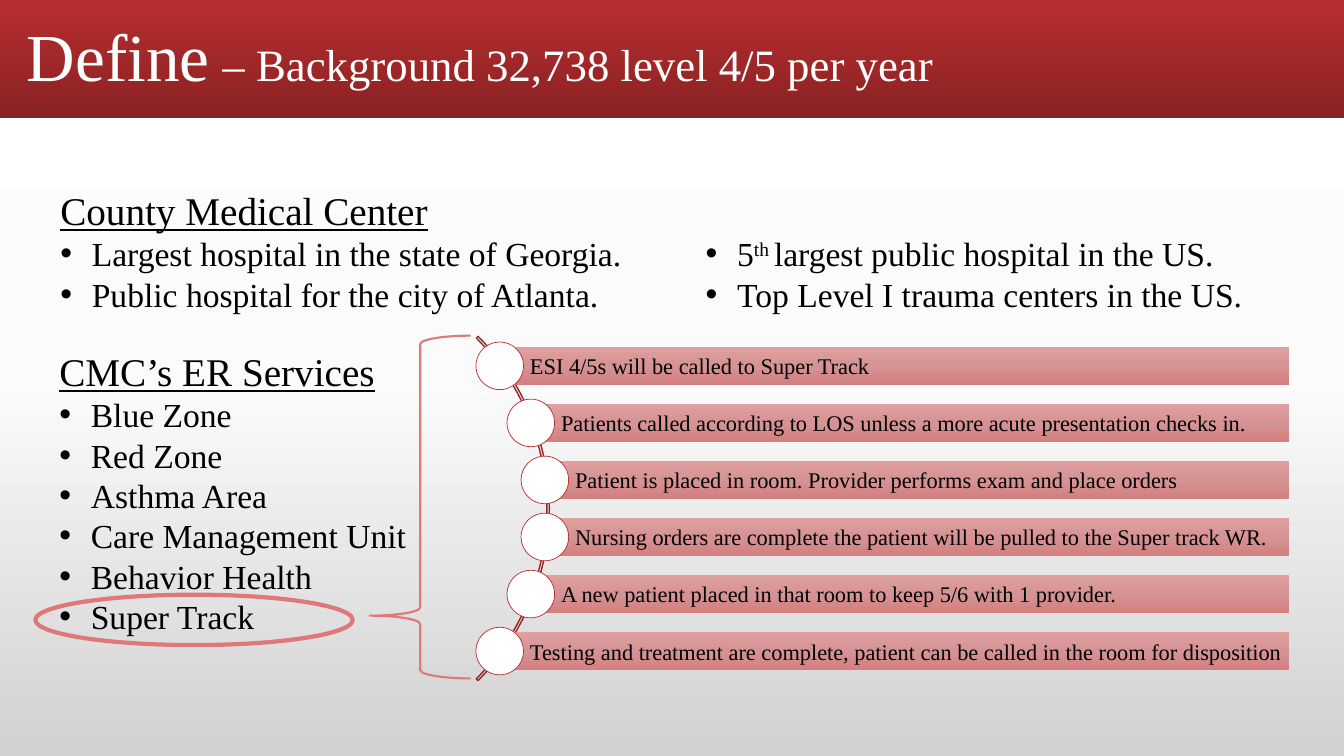
from dataclasses import dataclass
from math import sqrt
from typing import Optional

from lxml.etree import SubElement
from pptx import Presentation
from pptx.dml.color import RGBColor
from pptx.enum.shapes import MSO_SHAPE as Preset
from pptx.enum.text import MSO_ANCHOR as Anchor, PP_ALIGN as Align
from pptx.oxml.ns import qn
from pptx.util import Pt


@dataclass(frozen=True)
class Theme:
    font: str = "Times New Roman"
    white: str = "FFFFFF"
    black: str = "000000"
    accent: str = "B82D2F"
    arc: str = "932426"
    mark: str = "DE7879"
    banner: tuple = ((0, "B82D2F"), (100, "8A2223"))
    backdrop: tuple = ((0, "FFFFFF"), (50, "FBFBFB"), (100, "D1D1D1"))
    bar: tuple = ((0, "E0A0A0"), (50, "D69394"), (100, "D47F80"))
    title_size: int = 48
    gap_size: int = 36
    subtitle_size: int = 32
    heading_size: int = 28
    bullet_size: int = 24
    step_size: int = 16
    line_pitch: float = 1.2


THEME = Theme()


@dataclass(frozen=True)
class Box:
    left: float
    top: float
    width: float
    height: float

    def lengths(self) -> tuple:
        return Pt(self.left), Pt(self.top), Pt(self.width), Pt(self.height)


@dataclass(frozen=True)
class TextBlock:
    box: Box
    heading: Optional[str] = None
    bullets: tuple = ()  # each bullet is a tuple of (text, is superscript)


@dataclass(frozen=True)
class Outline:
    preset: Preset
    box: Box
    color: str
    weight: float
    adjustments: tuple = ()


def plain(*texts: str) -> tuple:
    return tuple(((text, False),) for text in texts)


BLOCKS = (
    TextBlock(Box(35.3, 244.5, 300, 241), "CMC’s ER Services",
              plain("Blue Zone", "Red Zone", "Asthma Area", "Care Management Unit",
                    "Behavior Health", "Super Track")),
    TextBlock(Box(36, 129.6, 480, 41), "County Medical Center"),
    TextBlock(Box(36, 163, 432, 65), bullets=plain(
        "Largest hospital in the state of Georgia.",
        "Public hospital for the city of Atlanta.")),
    TextBlock(Box(497, 163, 432, 65), bullets=(
        (("5", False), ("th ", True), ("largest public hospital in the US.", False)),
        *plain("Top Level I trauma centers in the US."))),
)

STEPS = (
    "ESI 4/5s will be called to Super Track",
    "Patients called according to LOS unless a more acute presentation checks in.",
    "Patient is placed in room. Provider performs exam and place orders",
    "Nursing orders are complete the patient will be pulled to the Super track WR.",
    "A new patient placed in that room to keep 5/6 with 1 provider.",
    "Testing and treatment are complete, patient can be called in the room for disposition",
)

# The steps sit on a circle around this centre
CENTER_X, CENTER_Y, RADIUS = 218.5, 363.2, 171.9
ARC_RADIUS = 173.9
STEP_PITCH, BAR_HEIGHT, BAR_RIGHT, DOT_SIZE = 40.75, 27.2, 920.9, 34

ARC = Outline(Preset.BLOCK_ARC,
              Box(CENTER_X - ARC_RADIUS, CENTER_Y - ARC_RADIUS, 2 * ARC_RADIUS, 2 * ARC_RADIUS),
              THEME.arc, 1, (189, 27, 0.005))
HIGHLIGHT = Outline(Preset.OVAL, Box(25.2, 424.8, 226.8, 36), THEME.mark, 3)
BRACE = Outline(Preset.LEFT_BRACE, Box(264.2, 239.8, 72, 244.8), THEME.mark, 1.5, (0.083, 0.817))


def rgb(color: str) -> RGBColor:
    return RGBColor.from_string(color)


def fill_gradient(fill, owner, stops: tuple) -> None:
    """Fill from top to bottom; owner is the XML element that holds the fill."""
    fill.gradient()
    fill.gradient_angle = 270
    stop_list = next(owner.iter(qn("a:gsLst")))
    for old_stop in list(stop_list):
        stop_list.remove(old_stop)
    for percent, color in stops:
        stop = SubElement(stop_list, qn("a:gs"), pos=str(percent * 1000))
        SubElement(stop, qn("a:srgbClr"), val=color)


def add_shape(slide, preset: Preset, box: Box):
    shape = slide.shapes.add_shape(preset, *box.lengths())
    shape.shadow.inherit = False
    return shape


def add_outline(slide, outline: Outline) -> None:
    shape = add_shape(slide, outline.preset, outline.box)
    shape.fill.background()
    shape.line.color.rgb = rgb(outline.color)
    shape.line.width = Pt(outline.weight)
    for index, value in enumerate(outline.adjustments):
        shape.adjustments[index] = value


def style(font, size: float, color: str = THEME.black) -> None:
    font.name, font.size = THEME.font, Pt(size)
    font.color.rgb = rgb(color)


def add_bullet(paragraph) -> None:
    properties = paragraph._p.get_or_add_pPr()
    properties.set("marL", str(Pt(22.5)))
    properties.set("indent", str(-Pt(22.5)))
    SubElement(properties, qn("a:buFont"), typeface="Arial")
    SubElement(properties, qn("a:buChar"), char="•")


def add_text_block(slide, block: TextBlock) -> None:
    frame = slide.shapes.add_textbox(*block.box.lengths()).text_frame
    frame.word_wrap = True
    heading = (((block.heading, False),),) if block.heading else ()
    for index, parts in enumerate(heading + block.bullets):
        paragraph = frame.add_paragraph() if index else frame.paragraphs[0]
        is_heading = index < len(heading)
        size = THEME.heading_size if is_heading else THEME.bullet_size
        paragraph.line_spacing = Pt(size * THEME.line_pitch)
        style(paragraph.font, size)
        if is_heading:
            paragraph.font.underline = True
        else:
            add_bullet(paragraph)
        for text, is_superscript in parts:
            run = paragraph.add_run()
            run.text = text
            if is_superscript:
                run.font._element.set("baseline", "30000")


def add_banner(slide) -> None:
    banner = add_shape(slide, Preset.RECTANGLE, Box(0, 0, 960, 84.2))
    fill_gradient(banner.fill, banner._element, THEME.banner)
    banner.line.fill.background()
    frame = slide.shapes.add_textbox(*Box(12.2, 7.9, 930.2, 64.1).lengths()).text_frame
    frame.word_wrap = True
    frame.vertical_anchor = Anchor.BOTTOM
    paragraph = frame.paragraphs[0]
    paragraph.line_spacing = 0.9
    for text, size in (("Define", THEME.title_size), (" ", THEME.gap_size),
                       ("– Background 32,738 level 4/5 per year", THEME.subtitle_size)):
        run = paragraph.add_run()
        run.text = text
        style(run.font, size, THEME.white)


def add_step(slide, index: int, text: str) -> None:
    offset = (index - (len(STEPS) - 1) / 2) * STEP_PITCH
    x, y = CENTER_X + sqrt(RADIUS ** 2 - offset ** 2), CENTER_Y + offset
    bar = add_shape(slide, Preset.RECTANGLE,
                    Box(x, y - BAR_HEIGHT / 2, BAR_RIGHT - x, BAR_HEIGHT))
    fill_gradient(bar.fill, bar._element, THEME.bar)
    bar.line.fill.background()
    frame = bar.text_frame
    frame.word_wrap = True
    frame.vertical_anchor = Anchor.MIDDLE
    frame.margin_left = Pt(21.6)
    frame.margin_top = frame.margin_right = frame.margin_bottom = Pt(2.9)
    paragraph = frame.paragraphs[0]
    paragraph.text, paragraph.alignment = text, Align.LEFT
    style(paragraph.font, THEME.step_size)

    dot = add_shape(slide, Preset.OVAL,
                    Box(x - DOT_SIZE / 2, y - DOT_SIZE / 2, DOT_SIZE, DOT_SIZE))
    dot.fill.solid()
    dot.fill.fore_color.rgb = rgb(THEME.white)
    dot.line.color.rgb = rgb(THEME.accent)
    dot.line.width = Pt(0.5)


def main() -> None:
    presentation = Presentation()
    presentation.slide_width, presentation.slide_height = Pt(960), Pt(540)
    slide = presentation.slides.add_slide(presentation.slide_layouts[6])
    fill_gradient(slide.background.fill, slide._element, THEME.backdrop)
    add_banner(slide)
    # Hospital facts and services
    for block in BLOCKS:
        add_text_block(slide, block)
    # Super Track steps along the arc
    add_outline(slide, ARC)
    for index, text in enumerate(STEPS):
        add_step(slide, index, text)
    # Link from the service to its steps
    for outline in (HIGHLIGHT, BRACE):
        add_outline(slide, outline)
    presentation.save("out.pptx")


if __name__ == "__main__":
    main()
